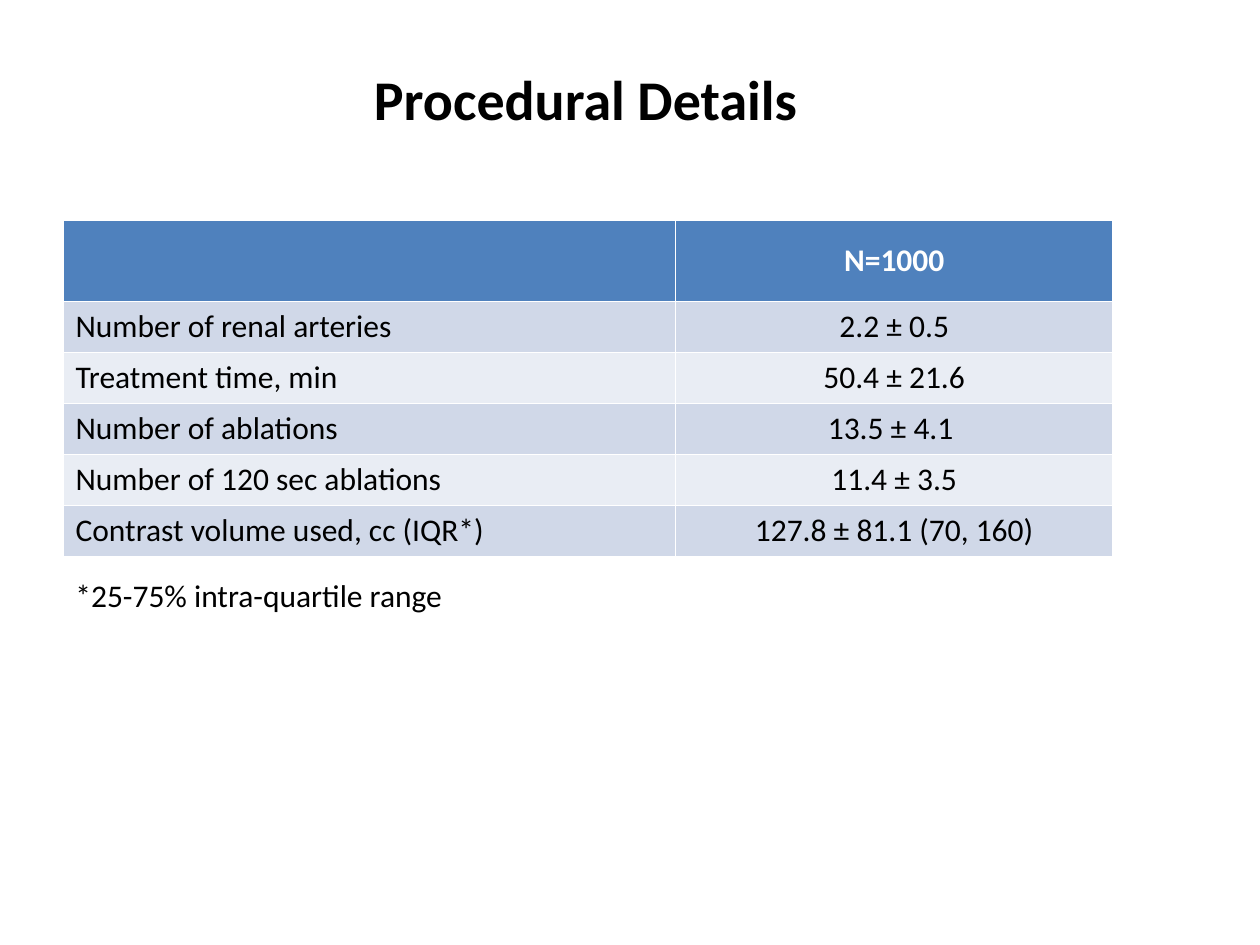
from pptx import Presentation
from pptx.dml.color import RGBColor as RGB
from pptx.enum.text import MSO_ANCHOR as Anchor, MSO_AUTO_SIZE as Fit, PP_ALIGN as Align
from pptx.util import Pt

COLORS = {
    "text": "000000",
    "head": "4F81BD",
    "head text": "FFFFFF",
    "odd": "D0D8E8",
    "even": "E9EDF4",
}
FONT = "Calibri"
ROWS = [
    ("", "N=1000"),
    ("Number of renal arteries", "2.2 ± 0.5"),
    ("Treatment time, min", "50.4 ± 21.6"),
    ("Number of ablations", "13.5 ± 4.1 "),
    ("Number of 120 sec ablations", "11.4 ± 3.5"),
    ("Contrast volume used, cc (IQR*)", "127.8 ± 81.1 (70, 160)"),
]


def color(name):
    return RGB.from_string(COLORS[name])


def style(para, size, bold=False, ink="text"):
    font = para.font
    font.name, font.size, font.bold = FONT, Pt(size), bold
    font.color.rgb = color(ink)


def add_label(slide, box, text, size, bold=False):
    """Add one line of text in a box that grows with it."""
    frame = slide.shapes.add_textbox(*map(Pt, box)).text_frame
    frame.word_wrap = False
    frame.auto_size = Fit.SHAPE_TO_FIT_TEXT
    frame.text = text
    style(frame.paragraphs[0], size, bold)


def add_details(slide, box, head=46.2, split=350):
    """Add the table; head is the first row's height, split the first column's width."""
    width, height = box[2:]
    table = slide.shapes.add_table(len(ROWS), 2, *map(Pt, box)).table
    for col, size in zip(table.columns, (split, width - split)):
        col.width = Pt(size)
    body = (height - head) / (len(ROWS) - 1)
    for i, texts in enumerate(ROWS):
        table.rows[i].height = Pt(body if i else head)
        fill = ("odd" if i % 2 else "even") if i else "head"
        for j, text in enumerate(texts):
            cell = table.cell(i, j)
            cell.fill.solid()
            cell.fill.fore_color.rgb = color(fill)
            cell.text = text
            para = cell.text_frame.paragraphs[0]
            style(para, 18, bold=i == 0, ink="text" if i else "head text")
            if j:
                para.alignment = Align.CENTER
            if i == 0:
                cell.vertical_anchor = Anchor.MIDDLE


def main():
    deck = Presentation()
    deck.slide_width, deck.slide_height = Pt(720), Pt(540)
    slide = deck.slides.add_slide(deck.slide_layouts[6])
    add_label(slide, (206.6, 33.1, 258.5, 46.1), "Procedural Details", 32, bold=True)
    add_details(slide, (36, 126, 600, 192.2))
    add_label(slide, (36, 325.5, 226.8, 29.1), "*25-75% intra-quartile range", 18)
    deck.save("out.pptx")


if __name__ == "__main__":
    main()
